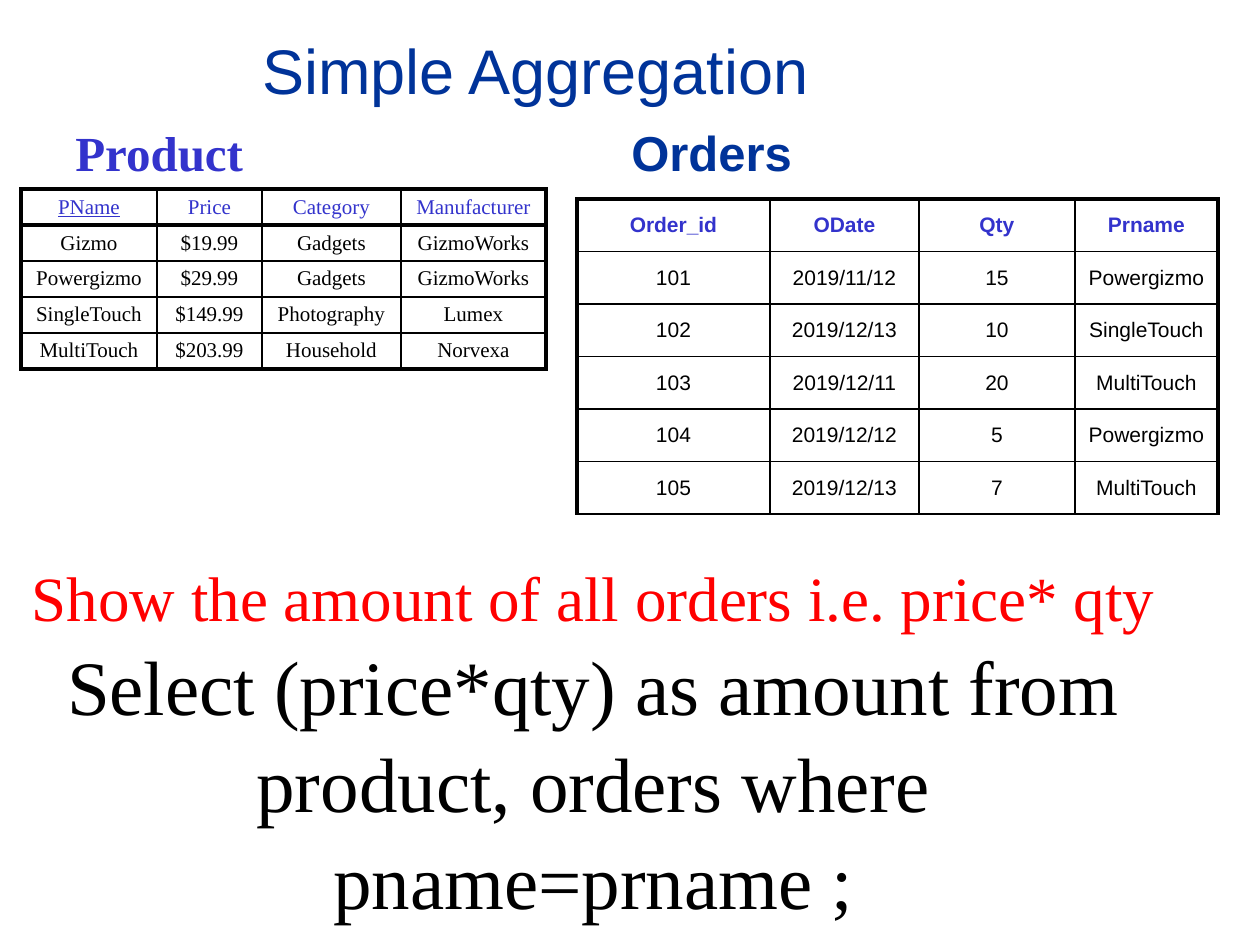
from lxml.etree import SubElement
from pptx import Presentation
from pptx.dml.color import RGBColor
from pptx.enum.text import MSO_ANCHOR, PP_ALIGN
from pptx.oxml.ns import qn
from pptx.util import Emu, Pt

SLIDE = (1260, 945)
SERIF, SANS = "Times New Roman", "Arial"
COLORS = {"navy": "003399", "blue": "3333CC", "red": "FF0000", "ink": "000000"}
THIN, THICK = 1, 2.25

PRODUCT = [
    ["PName", "Price", "Category", "Manufacturer"],
    ["Gizmo", "$19.99", "Gadgets", "GizmoWorks"],
    ["Powergizmo", "$29.99", "Gadgets", "GizmoWorks"],
    ["SingleTouch", "$149.99", "Photography", "Lumex"],
    ["MultiTouch", "$203.99", "Household", "Norvexa"],
]
ORDERS = [
    ["Order_id", "ODate", "Qty", "Prname"],
    ["101", "2019/11/12", "15", "Powergizmo"],
    ["102", "2019/12/13", "10", "SingleTouch"],
    ["103", "2019/12/11", "20", "MultiTouch"],
    ["104", "2019/12/12", "5", "Powergizmo"],
    ["105", "2019/12/13", "7", "MultiTouch"],
]


def px(n):
    return Emu(round(n * 914400 / 126))


def style(par, size, face, color, bold=False):
    for run in par.runs:
        font = run.font
        font.size, font.name, font.bold = Pt(size), face, bold
        font.color.rgb = RGBColor.from_string(COLORS[color])


def add_text(slide, box, lines, face, center=True, bold=False, lead=None):
    """Place lines of (text, size, color) in one text box."""
    frame = slide.shapes.add_textbox(*map(px, box)).text_frame
    frame.word_wrap = True
    frame.vertical_anchor = MSO_ANCHOR.MIDDLE if center else MSO_ANCHOR.TOP
    frame.text = "\n".join(text for text, _, _ in lines)
    for par, (_, size, color) in zip(frame.paragraphs, lines):
        par.alignment = PP_ALIGN.CENTER if center else PP_ALIGN.LEFT
        par.line_spacing = lead
        style(par, size, face, color, bold)


def set_edges(cell, edges):
    """Draw the cell borders; edges maps a side to its width in points."""
    props = cell._tc.get_or_add_tcPr()
    for i, side in enumerate("LRTB"):
        line = SubElement(props, qn(f"a:ln{side}"), w=str(Pt(edges[side])))
        fill = SubElement(line, qn("a:solidFill"))
        SubElement(fill, qn("a:srgbClr"), val=COLORS["ink"])
        props.insert(i, line)


def add_grid(slide, box, rows, cols, face, bold=False, rule=THIN, base=THICK):
    """Rule is the width under the header, base the width under the last row."""
    count, last = len(rows), len(cols) - 1
    table = slide.shapes.add_table(count, len(cols), *map(px, box)).table
    table.first_row = table.horz_banding = False
    for col, width in zip(table.columns, cols):
        col.width = px(width)
    for r, row in enumerate(rows):
        table.rows[r].height = px(box[3] / count)
        for c, text in enumerate(row):
            cell = table.cell(r, c)
            cell.text = text
            cell.vertical_anchor = MSO_ANCHOR.MIDDLE
            cell.margin_left = cell.margin_right = px(10)
            cell.margin_top = cell.margin_bottom = px(4)
            cell.fill.background()
            par = cell.text_frame.paragraphs[0]
            par.alignment = PP_ALIGN.CENTER
            style(par, 12, face, "ink" if r else "blue", bold and r == 0)
            tops = {0: THICK, 1: rule}
            ends = {0: rule, count - 1: base}
            set_edges(cell, {
                "L": THIN if c else THICK,
                "R": THICK if c == last else THIN,
                "T": tops.get(r, THIN),
                "B": ends.get(r, THIN),
            })
    return table


def add_product(slide, x, y):
    add_text(slide, (x + 42, y - 73, 357, 72), [("Product", 28, "blue")],
             SERIF, center=False, bold=True)
    table = add_grid(slide, (x, y, 525, 180), PRODUCT, (136, 105, 139, 145),
                     SERIF, rule=THICK)
    # The key column is underlined
    table.cell(0, 0).text_frame.paragraphs[0].runs[0].font.underline = True


def add_orders(slide, x, y):
    add_text(slide, (x + 42, y - 83, 262, 72), [("Orders", 28, "navy")],
             SANS, center=False, bold=True)
    add_grid(slide, (x, y, 641, 315), ORDERS, (193, 149, 156, 143),
             SANS, bold=True, base=THIN)


def add_query(slide, box):
    add_text(slide, box, [
        ("Show the amount of all orders i.e. price* qty", 36, "red"),
        ("Select (price*qty) as amount from product, orders where "
         "pname=prname ;", 44, "ink"),
    ], SERIF, lead=1.05)


def main():
    deck = Presentation()
    deck.slide_width, deck.slide_height = map(px, SLIDE)
    slide = deck.slides.add_slide(deck.slide_layouts[6])
    # Title
    add_text(slide, (0, -10, 1071, 158), [("Simple Aggregation", 36, "navy")],
             SANS)
    # Source tables
    add_product(slide, 21, 189)
    add_orders(slide, 577, 199)
    # Task and its query
    add_query(slide, (0, 661, 1187, 158))
    deck.save("out.pptx")


if __name__ == "__main__":
    main()
